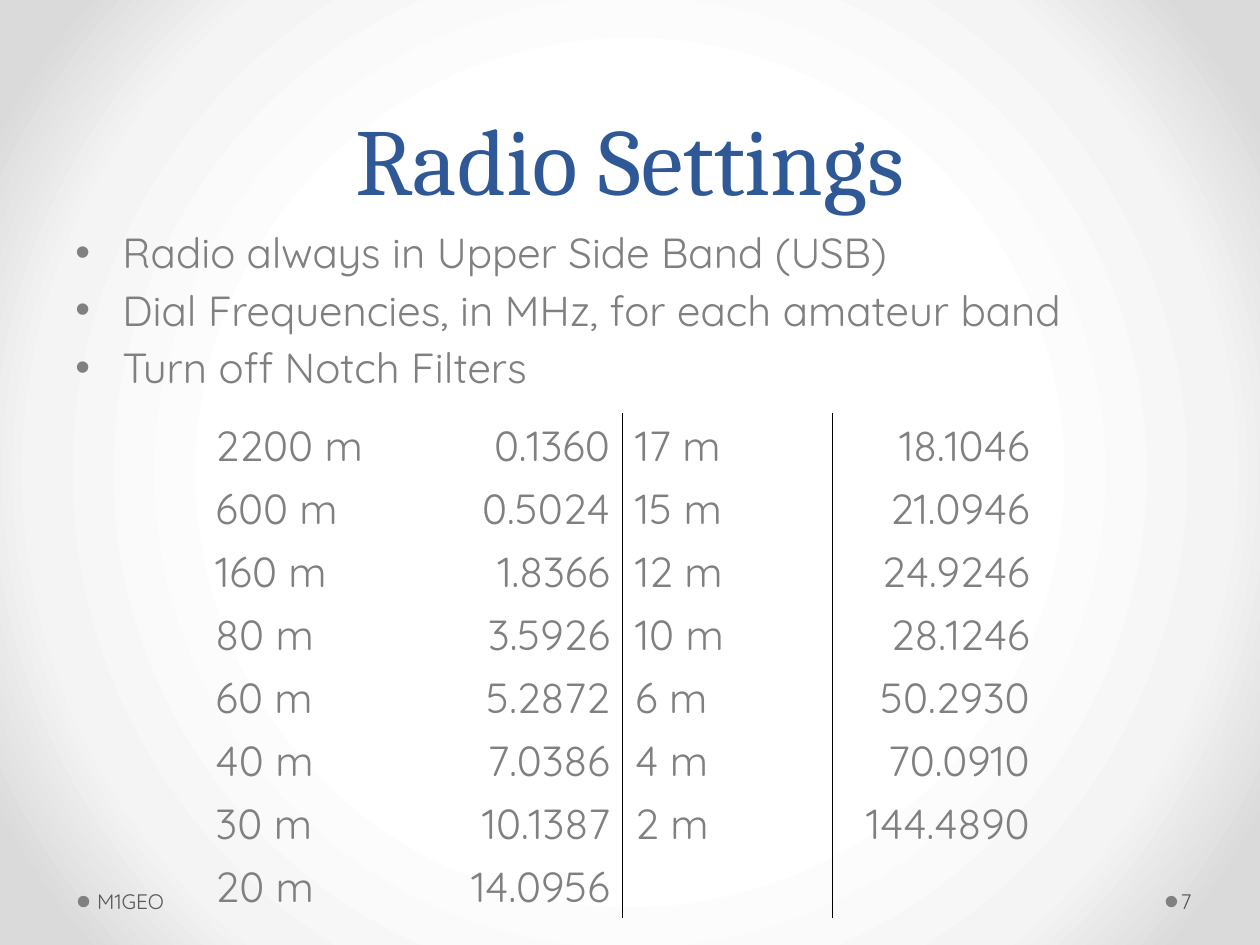
from dataclasses import dataclass
from itertools import zip_longest
from typing import NamedTuple

from lxml import etree
from pptx import Presentation, oxml, util as u
from pptx.dml import color
from pptx.enum import shapes, text
from pptx.oxml import ns


@dataclass(frozen=True)
class Theme:
    title_color: color.RGBColor = color.RGBColor(0x2F, 0x58, 0x97)
    body_color: color.RGBColor = color.RGBColor(0x80, 0x80, 0x80)
    footer_color: color.RGBColor = color.RGBColor(0x59, 0x59, 0x59)
    rule_color: str = "000000"
    backdrop: tuple = ((50, "FFFFFF"), (76, "F4F4F4"), (92, "DADADA"))
    title_font: str = "Cambria"
    body_font: str = "Quicksand"
    title_size: u.Pt = u.Pt(54)
    title_leading: u.Pt = u.Pt(58)
    body_size: u.Pt = u.Pt(24)
    body_gap: u.Pt = u.Pt(4)
    footer_size: u.Pt = u.Pt(12)
    rule_width: u.Pt = u.Pt(1)


class Box(NamedTuple):
    left: float
    top: float
    width: float
    height: float

    def lengths(self) -> list:
        return [u.Cm(value) for value in self]


class Footer(NamedTuple):
    label: str
    box: Box
    left_inset: float
    dot_left: float


class Band(NamedTuple):
    name: str
    dial: str


THEME = Theme()
TITLE_BOX = Box(1.27, 0, 22.86, 4.45)
BODY_BOX = Box(1.27, 4.45, 22.86, 12.57)
TABLE_BOX = Box(4.09, 8.33, 16.92, 8.4)
DOT_TOP, DOT_SIZE = 18.06, 0.23
BULLET_INDENT = u.Cm(0.95)
POINTS = (
    "Radio always in Upper Side Band (USB)",
    "Dial Frequencies, in MHz, for each amateur band",
    "Turn off Notch Filters",
)
FOOTERS = (
    Footer("7", Box(23.72, 17.65, 1.55, 1.02), 0.08, 23.5),
    Footer("M1GEO", Box(1.83, 17.65, 7.9, 1.02), 0.13, 1.57),
)
LOW_BANDS = (
    Band("2200 m", "0.1360"),
    Band("600 m", "0.5024"),
    Band("160 m", "1.8366"),
    Band("80 m", "3.5926"),
    Band("60 m", "5.2872"),
    Band("40 m", "7.0386"),
    Band("30 m", "10.1387"),
    Band("20 m", "14.0956"),
)
HIGH_BANDS = (
    Band("17 m", "18.1046"),
    Band("15 m", "21.0946"),
    Band("12 m", "24.9246"),
    Band("10 m", "28.1246"),
    Band("6 m", "50.2930"),
    Band("4 m", "70.0910"),
    Band("2 m", "144.4890"),
)
CELL_RULES = ((), ("lnR",), ("lnL", "lnR"), ("lnL",))
PLAIN_TABLE_STYLE = "{2D5ABB26-0587-4C30-8999-92F81FD0307C}"


def style_font(font, name: str, size: u.Pt, rgb: color.RGBColor) -> None:
    font.name, font.size = name, size
    font.color.rgb = rgb


def style_body(paragraph) -> None:
    for run in paragraph.runs:
        style_font(run.font, THEME.body_font, THEME.body_size, THEME.body_color)


def paint_background(slide) -> None:
    slide.background.fill.gradient()
    gradient = next(slide.element.iter(ns.qn("a:gradFill")))
    stops = "".join(
        f'<a:gs pos="{position * 1000}"><a:srgbClr val="{rgb}"/></a:gs>'
        for position, rgb in THEME.backdrop
    )
    radial = oxml.parse_xml(
        f'<a:gradFill {ns.nsdecls("a")} rotWithShape="1"><a:gsLst>{stops}</a:gsLst>'
        '<a:path path="circle"><a:fillToRect l="50000" t="50000" r="50000" b="50000"/>'
        "</a:path></a:gradFill>"
    )
    gradient.getparent().replace(gradient, radial)


def add_text(slide, box: Box, content: str, anchor: text.MSO_ANCHOR):
    frame = slide.shapes.add_textbox(*box.lengths()).text_frame
    frame.word_wrap = True
    frame.vertical_anchor = anchor
    frame.text = content
    return frame


def add_title(slide) -> None:
    frame = add_text(slide, TITLE_BOX, "Radio Settings", text.MSO_ANCHOR.BOTTOM)
    paragraph = frame.paragraphs[0]
    paragraph.alignment = text.PP_ALIGN.CENTER
    paragraph.line_spacing = THEME.title_leading
    style_font(paragraph.runs[0].font, THEME.title_font, THEME.title_size, THEME.title_color)


def add_points(slide) -> None:
    frame = add_text(slide, BODY_BOX, "\n".join(POINTS), text.MSO_ANCHOR.TOP)
    for index, paragraph in enumerate(frame.paragraphs):
        properties = paragraph._p.get_or_add_pPr()
        properties.set("marL", str(BULLET_INDENT))
        properties.set("indent", str(-BULLET_INDENT))
        etree.SubElement(properties, ns.qn("a:buFont"), typeface="Arial")
        etree.SubElement(properties, ns.qn("a:buChar"), char="•")
        if index:
            paragraph.space_before = THEME.body_gap
        style_body(paragraph)


def add_cell_rule(cell, side: str) -> None:
    properties = cell._tc.get_or_add_tcPr()
    line = etree.SubElement(properties, ns.qn(f"a:{side}"), w=str(THEME.rule_width))
    fill = etree.SubElement(line, ns.qn("a:solidFill"))
    etree.SubElement(fill, ns.qn("a:srgbClr"), val=THEME.rule_color)


def add_band_table(slide) -> None:
    rows = [
        (*low, *high)
        for low, high in zip_longest(LOW_BANDS, HIGH_BANDS, fillvalue=Band("", ""))
    ]
    frame = slide.shapes.add_table(len(rows), len(CELL_RULES), *TABLE_BOX.lengths())
    table = frame.table
    table.first_row = table.horz_banding = False
    next(table._tbl.iter(ns.qn("a:tableStyleId"))).text = PLAIN_TABLE_STYLE
    for row_index, row in enumerate(rows):
        for column_index, content in enumerate(row):
            cell = table.cell(row_index, column_index)
            cell.text = content
            for side in CELL_RULES[column_index]:
                add_cell_rule(cell, side)
            cell.fill.background()
            paragraph = cell.text_frame.paragraphs[0]
            if column_index % 2:
                paragraph.alignment = text.PP_ALIGN.RIGHT
            style_body(paragraph)


def add_dot(slide, left: float) -> None:
    box = Box(left, DOT_TOP, DOT_SIZE, DOT_SIZE)
    dot = slide.shapes.add_shape(shapes.MSO_SHAPE.OVAL, *box.lengths())
    dot.shadow.inherit = False
    dot.fill.solid()
    dot.fill.fore_color.rgb = THEME.body_color
    dot.line.fill.background()


def add_footer(slide, footer: Footer) -> None:
    frame = add_text(slide, footer.box, footer.label, text.MSO_ANCHOR.MIDDLE)
    frame.margin_left = u.Cm(footer.left_inset)
    run = frame.paragraphs[0].runs[0]
    style_font(run.font, THEME.body_font, THEME.footer_size, THEME.footer_color)


def main() -> None:
    presentation = Presentation()
    presentation.slide_width, presentation.slide_height = u.Cm(25.4), u.Cm(19.05)
    slide = presentation.slides.add_slide(presentation.slide_layouts[6])
    paint_background(slide)
    for footer in FOOTERS:
        add_dot(slide, footer.dot_left)
    add_title(slide)
    add_points(slide)
    add_band_table(slide)
    for footer in FOOTERS:
        add_footer(slide, footer)
    presentation.save("out.pptx")


if __name__ == "__main__":
    main()
